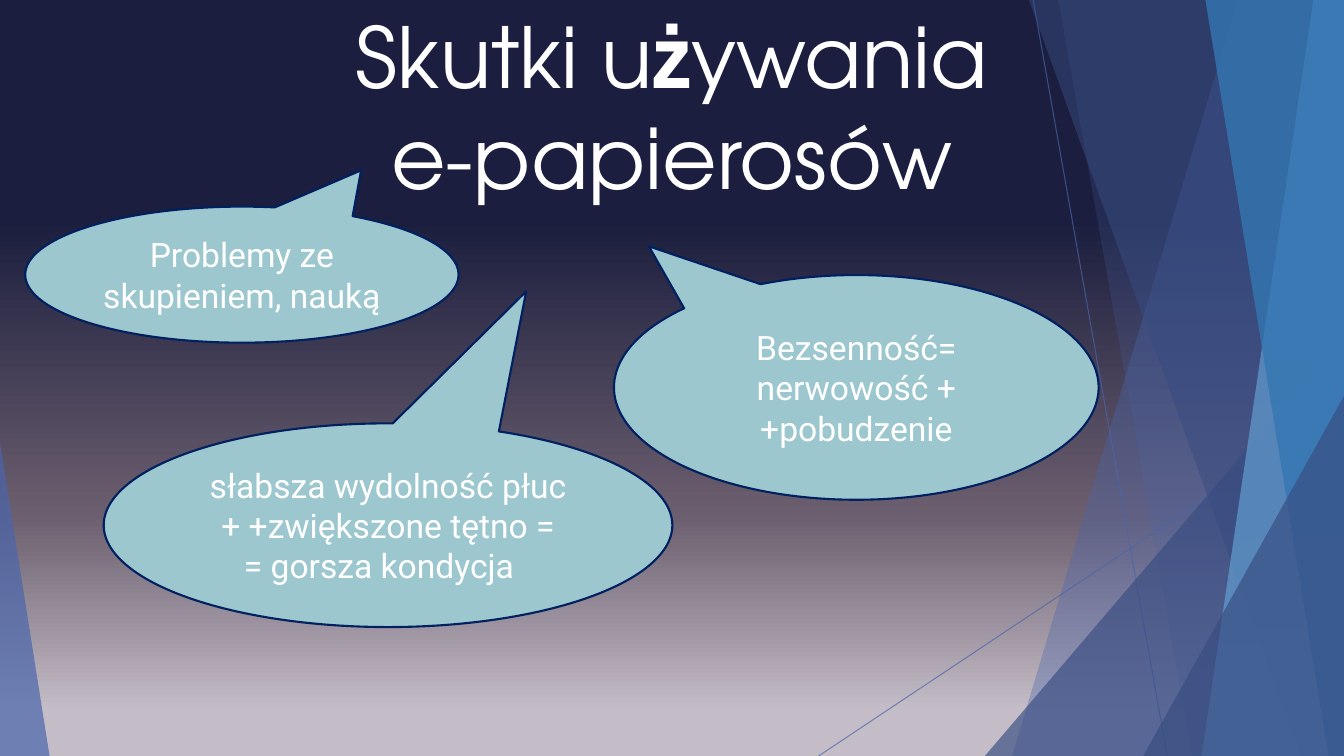
from copy import deepcopy

from lxml.etree import SubElement
from pptx import Presentation
from pptx.dml.color import RGBColor as RGB
from pptx.enum.shapes import MSO_CONNECTOR as CONN, MSO_SHAPE as SHAPE
from pptx.enum.text import MSO_ANCHOR as ANCHOR, PP_ALIGN as ALIGN
from pptx.oxml.ns import qn
from pptx.util import Inches, Pt

WHITE = RGB(0xFF, 0xFF, 0xFF)
INDIGO = RGB(0x4A, 0x66, 0xAC)
DEEP = RGB(0x38, 0x4C, 0x81)
SKY = RGB(0x62, 0x9D, 0xD1)
OCEAN = RGB(0x34, 0x77, 0xB2)
TEAL = RGB(0x9C, 0xC7, 0xCE)
NAVY = RGB(0x00, 0x20, 0x60)
BACKDROP = [(0.06, RGB(0xC4, 0xBC, 0xC6)),
            (0.32, RGB(0x6B, 0x5E, 0x6E)),
            (0.71, RGB(0x1B, 0x1E, 0x3E))]
COLS, ROWS = 32, 18

RAYS = [((24.6, 0), (27.79, ROWS)), ((COLS, 9.67), (19.49, ROWS))]
BACK_BANDS = [(29.47, 24.1, INDIGO, 36), (25.2, 28.39, INDIGO, 20)]
FRONT_BANDS = [(24.5, 30.98, DEEP, 50), (31.27, 28.61, SKY, 70),
               (28.7, 31.63, OCEAN, 80)]
CALLOUTS = [
    ((0.6, 4.92, 10.32, 3.24), (0.275, -0.767),
     [("Problemy ze skupieniem, nauką", 0)]),
    ((2.47, 10.08, 13.54, 4.85), (0.243, -1.148),
     [("słabsza wydolność płuc + +zwiększone tętno =", 0),
      ("= gorsza kondycja", 0.43)]),
    ((14.62, 6.55, 11.54, 5.35), (-0.428, -0.628),
     [("Bezsenność= nerwowość + +pobudzenie", 0)]),
]


class Deck:
    title_font = {"name": "TeX Gyre Adventor", "size": Pt(60)}
    body_font = {"name": "Roboto", "size": Pt(24)}

    def __init__(self):
        self.prs = Presentation()
        self.prs.slide_width = Inches(13.33)
        self.prs.slide_height = Inches(7.5)
        self.s = self.prs.slides.add_slide(self.prs.slide_layouts[6])

    def x(self, col):
        return round(self.prs.slide_width * col / COLS)

    def y(self, row):
        return round(self.prs.slide_height * row / ROWS)

    def box(self, col, row, cols, rows):
        return self.x(col), self.y(row), self.x(cols), self.y(rows)

    def background(self, stops):
        fill = self.s.background.fill
        fill.gradient()
        fill.gradient_angle = 90
        gs = self.s.background._cSld.find(".//" + qn("a:gsLst"))
        gs.append(deepcopy(gs[0]))
        for stop, (position, color) in zip(fill.gradient_stops, stops):
            stop.position = position
            stop.color.rgb = color

    def alpha(self, sp, percent):
        color = sp._element.spPr.find(".//" + qn("a:srgbClr"))
        SubElement(color, qn("a:alpha"), val=str(percent * 1000))

    def paint(self, sp, color, percent):
        sp.shadow.inherit = False
        sp.fill.solid()
        sp.fill.fore_color.rgb = color
        sp.line.fill.background()
        self.alpha(sp, percent)

    def ray(self, start, end):
        sp = self.s.shapes.add_connector(
            CONN.STRAIGHT, self.x(start[0]), self.y(start[1]),
            self.x(end[0]), self.y(end[1]))
        sp.line.color.rgb = INDIGO
        sp.line.width = Pt(0.75)
        self.alpha(sp, 70)
        SubElement(sp._element.spPr, qn("a:effectLst"))

    def band(self, top, bottom, color, percent):
        fb = self.s.shapes.build_freeform(self.x(top), 0)
        fb.add_line_segments([(self.x(c), self.y(r)) for c, r in
                              ((COLS, 0), (COLS, ROWS), (bottom, ROWS))])
        self.paint(fb.convert_to_shape(), color, percent)

    def triangle(self, col, row, cols, apex, color, percent):
        sp = self.s.shapes.add_shape(
            SHAPE.ISOSCELES_TRIANGLE, *self.box(col, row, cols, ROWS - row))
        sp.adjustments[0] = apex
        self.paint(sp, color, percent)

    def run(self, p, text, font, bold=False):
        r = p.add_run()
        r.text = text
        for key, value in {**font, "bold": bold}.items():
            setattr(r.font, key, value)
        r.font.color.rgb = WHITE

    def title(self, area, lines):
        tf = self.s.shapes.add_textbox(*self.box(*area)).text_frame
        tf.word_wrap = True
        for i, line in enumerate(lines):
            p = tf.add_paragraph() if i else tf.paragraphs[0]
            p.alignment = ALIGN.CENTER
            for text, bold in line:
                self.run(p, text, self.title_font, bold)

    def callout(self, area, tip, lines):
        sp = self.s.shapes.add_shape(SHAPE.OVAL_CALLOUT, *self.box(*area))
        sp.shadow.inherit = False
        sp.adjustments[0], sp.adjustments[1] = tip
        sp.fill.solid()
        sp.fill.fore_color.rgb = TEAL
        sp.line.color.rgb = NAVY
        sp.line.width = Pt(1.5)
        tf = sp.text_frame
        tf.word_wrap = True
        tf.vertical_anchor = ANCHOR.MIDDLE
        for i, (text, indent) in enumerate(lines):
            p = tf.add_paragraph() if i else tf.paragraphs[0]
            p.alignment = ALIGN.CENTER
            if indent:
                p._p.get_or_add_pPr().set("marR", str(self.x(indent)))
            self.run(p, text, self.body_font)


def main():
    deck = Deck()
    deck.background(BACKDROP)
    for ray in RAYS:
        deck.ray(*ray)
    for band in BACK_BANDS:
        deck.band(*band)
    deck.triangle(23.45, 7.99, 8.55, 1, DEEP, 66)
    for band in FRONT_BANDS:
        deck.band(*band)
    deck.triangle(27.22, 9.43, 4.78, 1, DEEP, 66)
    deck.triangle(0, 10.54, 1.18, 0, INDIGO, 70)
    deck.title((5.28, 0, 21.43, 5.09),
               [[("Skutki u", False), ("ż", True), ("ywania", False)],
                [("e-papierosów", False)]])
    for callout in CALLOUTS:
        deck.callout(*callout)
    deck.prs.save("out.pptx")


if __name__ == "__main__":
    main()
